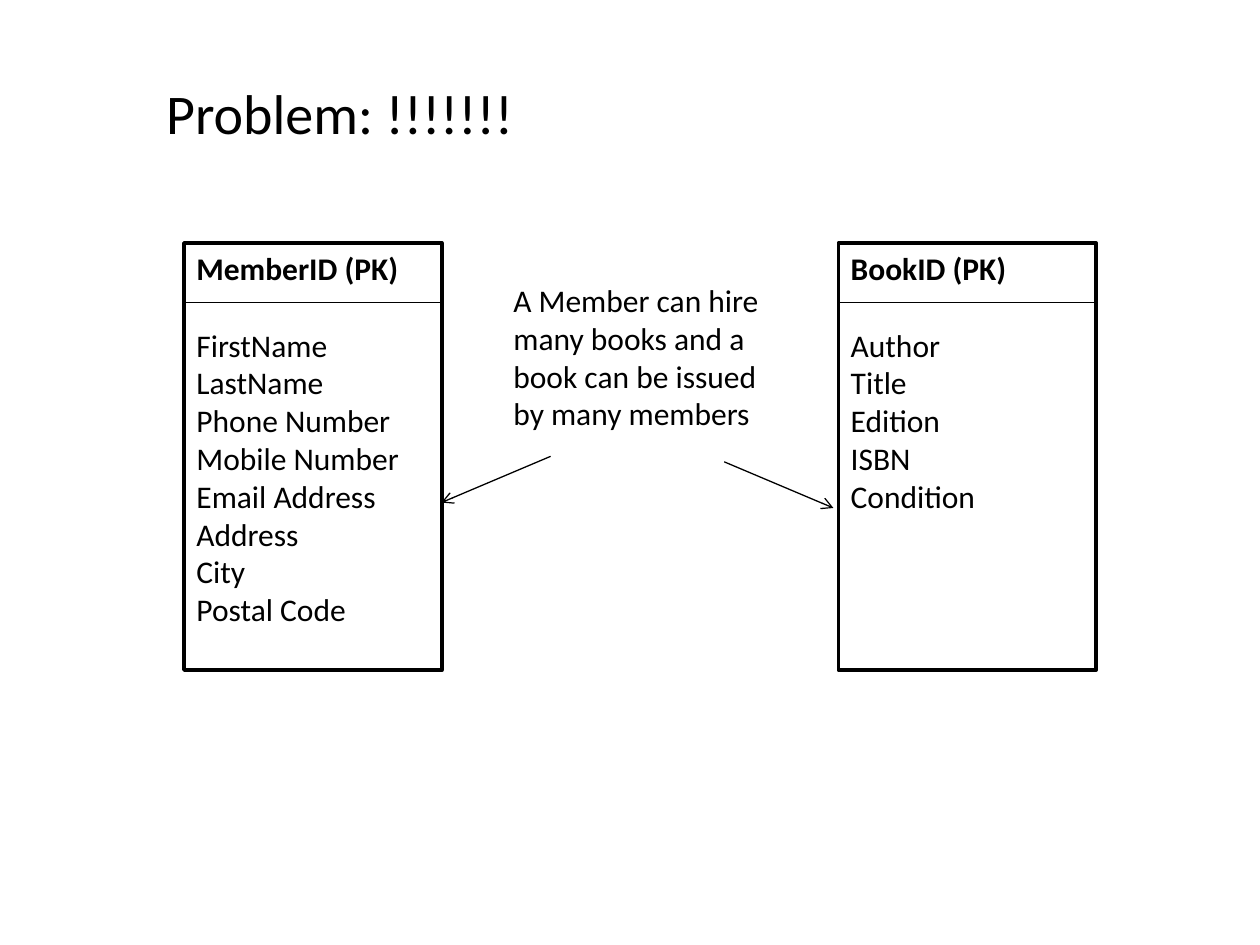
import pptx
import pptx.dml.color
import pptx.enum.shapes
import pptx.enum.text
import pptx.oxml.ns
import pptx.util
from lxml import etree

Cm = pptx.util.Cm
Pt = pptx.util.Pt
BLACK = pptx.dml.color.RGBColor(0, 0, 0)
WHITE = pptx.dml.color.RGBColor(255, 255, 255)

ENTITY_TOP, ENTITY_WIDTH, ENTITY_HEIGHT = 4.9, 5.2, 8.61
KEY_HEIGHT = 1.2


class DiagramSlide:
    font_name = "Calibri"
    body_size = 18

    def __init__(self, presentation):
        self.slide = presentation.slides.add_slide(presentation.slide_layouts[6])

    def fill_text(self, shape, lines, size):
        frame = shape.text_frame
        frame.word_wrap = True
        frame.vertical_anchor = pptx.enum.text.MSO_ANCHOR.TOP
        frame.text = "\n".join(lines)
        for paragraph in frame.paragraphs:
            paragraph.alignment = pptx.enum.text.PP_ALIGN.LEFT
            paragraph.font.name = self.font_name
            paragraph.font.size = Pt(size)
            paragraph.font.color.rgb = BLACK

    def text(self, left, top, width, height, content, size=body_size):
        box = self.slide.shapes.add_textbox(Cm(left), Cm(top), Cm(width), Cm(height))
        self.fill_text(box, [content], size)

    def line(self, start, end, shapes=None, arrow=False):
        shapes = shapes or self.slide.shapes
        connector = shapes.add_connector(
            pptx.enum.shapes.MSO_CONNECTOR.STRAIGHT, *map(Cm, start + end))
        connector.line.color.rgb = BLACK
        connector.line.width = Pt(0.75)
        properties = connector._element.spPr
        if arrow:
            etree.SubElement(properties.get_or_add_ln(),
                             pptx.oxml.ns.qn("a:tailEnd"), type="arrow")
        etree.SubElement(properties, pptx.oxml.ns.qn("a:effectLst"))

    def entity(self, left, key, attributes):
        """Draw a box with its primary key above a rule and its attributes below."""
        shapes = self.slide.shapes.add_group_shape().shapes
        box = shapes.add_shape(
            pptx.enum.shapes.MSO_SHAPE.RECTANGLE,
            Cm(left), Cm(ENTITY_TOP), Cm(ENTITY_WIDTH), Cm(ENTITY_HEIGHT))
        box.shadow.inherit = False
        box.fill.solid()
        box.fill.fore_color.rgb = WHITE
        box.line.color.rgb = BLACK
        box.line.width = Pt(2)
        self.fill_text(box, [key, *attributes], self.body_size)
        heading = box.text_frame.paragraphs[0]
        heading.font.bold = True
        heading.space_after = Pt(22)
        rule = ENTITY_TOP + KEY_HEIGHT
        self.line((left, rule), (left + ENTITY_WIDTH, rule), shapes)


def main():
    presentation = pptx.Presentation()
    presentation.slide_width = Cm(25.4)
    presentation.slide_height = Cm(19.05)

    diagram = DiagramSlide(presentation)
    diagram.text(3.1, 1.45, 22.86, 2, "Problem: !!!!!!!", size=32)
    diagram.entity(3.71, "MemberID (PK)", [
        "FirstName", "LastName", "Phone Number", "Mobile Number",
        "Email Address", "Address", "City", "Postal Code"])
    diagram.entity(16.9, "BookID (PK)", [
        "Author", "Title", "Edition", "ISBN", "Condition"])
    diagram.text(10.1, 5.54, 5.6, 3.33,
                 "A Member can hire many books and a book can be issued by many members")
    diagram.line((11.1, 9.2), (8.9, 10.13), arrow=True)
    diagram.line((14.6, 9.31), (16.8, 10.24), arrow=True)

    presentation.save("out.pptx")


if __name__ == "__main__":
    main()
